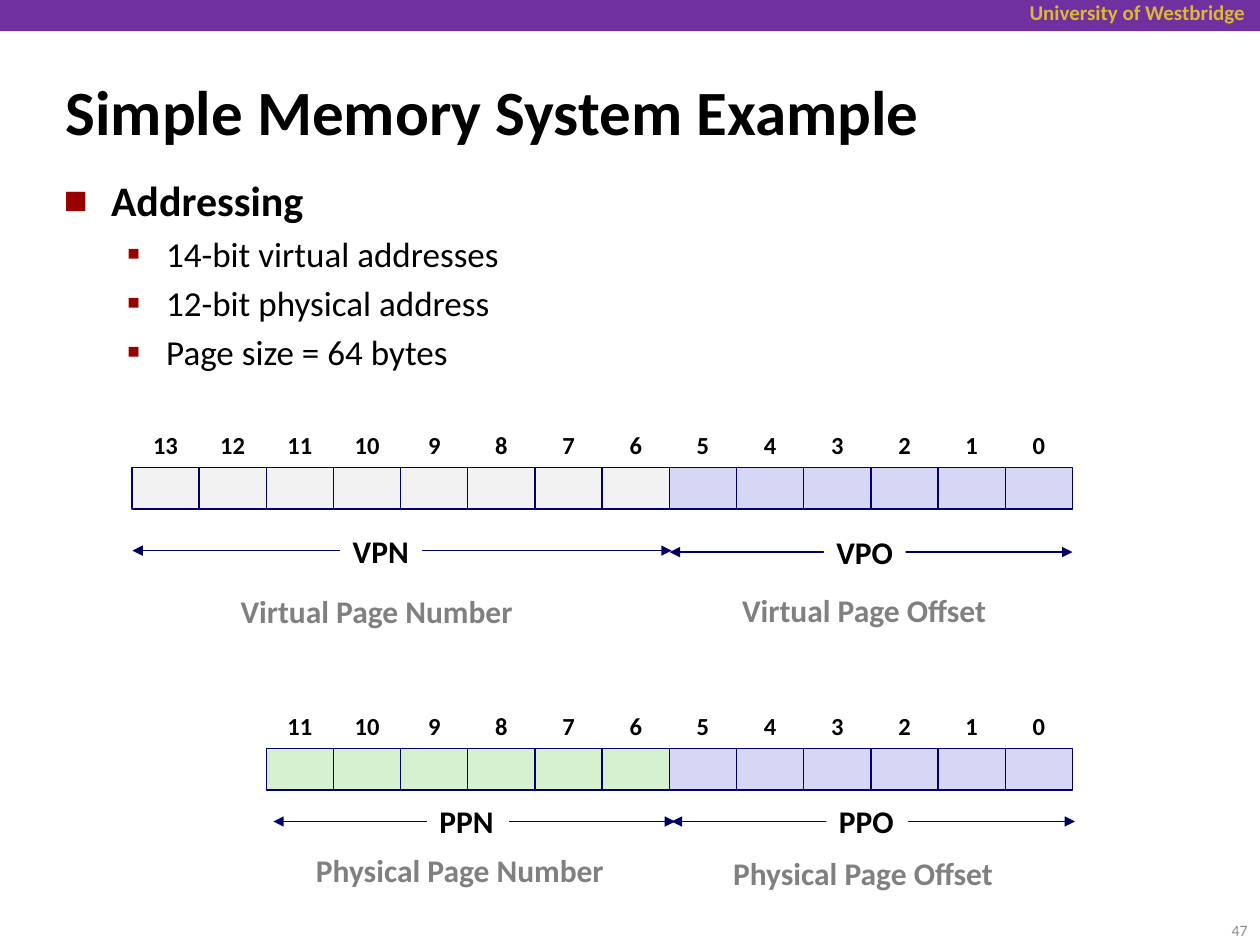
import pptx
import pptx.dml.color
import pptx.enum.shapes
import pptx.enum.text
import pptx.oxml.ns
import pptx.util
import lxml.etree

Cm = pptx.util.Cm
Pt = pptx.util.Pt
RECTANGLE = pptx.enum.shapes.MSO_SHAPE.RECTANGLE
STRAIGHT = pptx.enum.shapes.MSO_CONNECTOR.STRAIGHT
LEFT = pptx.enum.text.PP_ALIGN.LEFT
CENTER = pptx.enum.text.PP_ALIGN.CENTER
RIGHT = pptx.enum.text.PP_ALIGN.RIGHT
MIDDLE = pptx.enum.text.MSO_ANCHOR.MIDDLE
TOP = pptx.enum.text.MSO_ANCHOR.TOP
NAVY, BLACK, GRAY = "000066", "000000", "808080"
qn = pptx.oxml.ns.qn


def color(hex_value):
    return pptx.dml.color.RGBColor.from_string(hex_value)


def write(para, text, size, hex_value, bold=True, align=LEFT, before=0, spacing=1.0):
    para.alignment = align
    para.space_before = Pt(before)
    para.line_spacing = spacing
    span = para.add_run()
    span.text = text
    span.font.name = "Calibri"
    span.font.size = Pt(size)
    span.font.bold = bold
    span.font.color.rgb = color(hex_value)


deck = pptx.Presentation()
deck.slide_width = Cm(25.4)
deck.slide_height = Cm(19.05)
page = deck.slides.add_slide(deck.slide_layouts[5])
shapes = page.shapes

banner = shapes.add_shape(RECTANGLE, 0, 0, deck.slide_width, Cm(0.63))
banner.shadow.inherit = False
banner.fill.solid()
banner.fill.fore_color.rgb = color("7030A0")
banner.line.fill.background()

school = shapes.add_textbox(Cm(18.62), Cm(-0.13), Cm(6.73), Cm(0.76))
school.text_frame.word_wrap = True
write(school.text_frame.paragraphs[0], "University of Westbridge", 12, "DCB834", align=RIGHT)

title = shapes.title
title.left, title.top, title.width, title.height = Cm(1.07), Cm(1.42), Cm(20.29), Cm(1.6)
title.text_frame.auto_size = pptx.enum.text.MSO_AUTO_SIZE.NONE
title.text_frame.vertical_anchor = MIDDLE
write(title.text_frame.paragraphs[0], "Simple Memory System Example", 36, BLACK)

body = shapes.add_textbox(Cm(1.04), Cm(3.4), Cm(23.09), Cm(4.39))
body.text_frame.word_wrap = True
for index, (text, level) in enumerate([
    ("Addressing", 0),
    ("14-bit virtual addresses", 1),
    ("12-bit physical address", 1),
    ("Page size = 64 bytes", 1),
]):
    para = body.text_frame.paragraphs[0] if index == 0 else body.text_frame.add_paragraph()
    size, margin, indent, mark, percent = [(24, 0.95, 0.95, "■", 60), (20, 2.06, 0.79, "▪", 110)][level]
    write(para, text, size, BLACK, bold=level == 0, before=size * 0.2)
    para.level = level
    properties = para._p.get_or_add_pPr()
    properties.set("marL", str(Cm(margin)))
    properties.set("indent", str(-Cm(indent)))
    bullet_color = lxml.etree.SubElement(properties, qn("a:buClr"))
    lxml.etree.SubElement(bullet_color, qn("a:srgbClr"), val="990000")
    lxml.etree.SubElement(properties, qn("a:buSzPct"), val=str(percent * 1000))
    lxml.etree.SubElement(properties, qn("a:buFont"), typeface="Calibri")
    lxml.etree.SubElement(properties, qn("a:buChar"), char=mark)

row_right = 21.62
bit_width = 18.96 / 14
bit_height = 0.84
offset_bits = 6
for bit_count, top, number_fill in [(14, 9.42, "F2F2F2"), (12, 15.09, "D5F1CF")]:
    for bit in reversed(range(bit_count)):
        left = row_right - (bit + 1) * bit_width
        cell = shapes.add_shape(RECTANGLE, Cm(left), Cm(top), Cm(bit_width), Cm(bit_height))
        cell.shadow.inherit = False
        cell.fill.solid()
        cell.fill.fore_color.rgb = color("D6D6F5" if bit < offset_bits else number_fill)
        cell.line.color.rgb = color(NAVY)
        cell.line.width = Pt(0.75)
        label = shapes.add_textbox(Cm(left), Cm(top - bit_height), Cm(bit_width), Cm(bit_height))
        label.text_frame.word_wrap = False
        label.text_frame.vertical_anchor = MIDDLE
        write(label.text_frame.paragraphs[0], str(bit), 14, BLACK, align=CENTER, before=5.2, spacing=0.88)

for name, start, end, middle, name_left, caption, caption_left, caption_top, caption_width in [
    ("VPO", 13.5, 21.62, 11.13, 16.61, "Virtual Page Offset", 14.71, 11.89, 5.49),
    ("PPO", 13.54, 21.67, 16.56, 16.66, "Physical Page Offset", 14.53, 17.2, 5.82),
    ("PPN", 5.51, 13.61, 16.56, 8.61, "Physical Page Number", 6.12, 17.12, 6.35),
    ("VPN", 2.67, 13.54, 11.1, 6.86, "Virtual Page Number", 4.6, 11.91, 6.05),
]:
    arrow = shapes.add_connector(STRAIGHT, Cm(start), Cm(middle), Cm(end), Cm(middle))
    arrow.line.color.rgb = color(NAVY)
    arrow.line.width = Pt(0.75)
    outline = arrow.line._get_or_add_ln()
    for tip in ("a:headEnd", "a:tailEnd"):
        lxml.etree.SubElement(outline, qn(tip), type="triangle")
    lxml.etree.SubElement(arrow._element.spPr, qn("a:effectLst"))

    name_box = shapes.add_shape(RECTANGLE, Cm(name_left), Cm(middle - 0.41), Cm(1.65), Cm(0.91))
    name_box.shadow.inherit = False
    name_box.fill.solid()
    name_box.fill.fore_color.rgb = color("FFFFFF")
    name_box.line.fill.background()
    caption_box = shapes.add_textbox(Cm(caption_left), Cm(caption_top), Cm(caption_width), Cm(0.91))
    for box, text, text_color in [(name_box, name, BLACK), (caption_box, caption, GRAY)]:
        box.text_frame.word_wrap = False
        box.text_frame.vertical_anchor = TOP
        write(box.text_frame.paragraphs[0], text, 18, text_color, before=6.8, spacing=0.88)

page_number = shapes.add_textbox(Cm(23.7), Cm(18.24), Cm(1.7), Cm(1.02))
page_number.text_frame.word_wrap = True
page_number.text_frame.vertical_anchor = MIDDLE
write(page_number.text_frame.paragraphs[0], "47", 9, "8C8C8C", bold=False, align=RIGHT)

deck.save("out.pptx")
